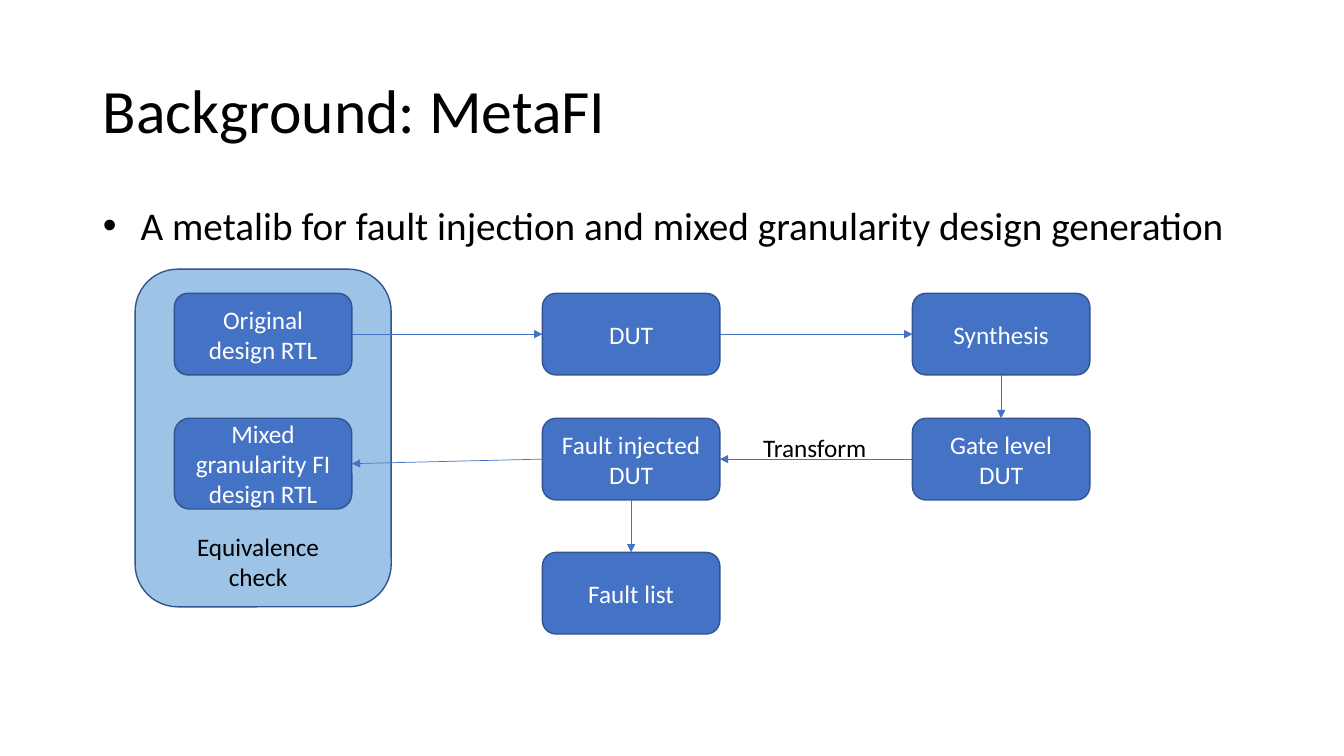
from lxml import etree
from pptx import Presentation
from pptx.dml.color import RGBColor
from pptx.enum.shapes import MSO_CONNECTOR, MSO_SHAPE
from pptx.enum.text import MSO_ANCHOR, MSO_AUTO_SIZE, PP_ALIGN
from pptx.oxml.ns import qn
from pptx.util import Inches, Pt

ROUND = MSO_SHAPE.ROUNDED_RECTANGLE
STRAIGHT = MSO_CONNECTOR.STRAIGHT
LEFT, CENTER = PP_ALIGN.LEFT, PP_ALIGN.CENTER
TOP, MIDDLE = MSO_ANCHOR.TOP, MSO_ANCHOR.MIDDLE
FIXED, GROW = MSO_AUTO_SIZE.NONE, MSO_AUTO_SIZE.SHAPE_TO_FIT_TEXT
# Connection sites of a rectangle
UP, WEST, DOWN, EAST = range(4)

COLORS = {
    "text": "000000",
    "white": "FFFFFF",
    "blue": "4472C4",
    "edge": "325491",
    "panel": "9DC3E6",
}
FONT = "Calibri"
COLS = (1.73, 5.38, 9.05)
ROWS = (2.91, 4.15, 5.48)
WIDTH, HEIGHT = 1.76, 0.81

# name: text, column, row, height
STEPS = {
    "design": ("Original design RTL", 0, 0, HEIGHT),
    "dut": ("DUT", 1, 0, HEIGHT),
    "synth": ("Synthesis", 2, 0, HEIGHT),
    "mixed": ("Mixed granularity FI design RTL", 0, 1, 0.9),
    "fault": ("Fault injected DUT", 1, 1, HEIGHT),
    "gate": ("Gate level DUT", 2, 1, HEIGHT),
    "list": ("Fault list", 1, 2, HEIGHT),
}
FLOWS = (
    ("design", EAST, "dut", WEST),
    ("dut", EAST, "synth", WEST),
    ("synth", DOWN, "gate", UP),
    ("gate", WEST, "fault", EAST),
    ("fault", WEST, "mixed", EAST),
    ("fault", DOWN, "list", UP),
)


def rgb(name):
    return RGBColor.from_string(COLORS[name])


def write(frame, text, size, color="text", align=LEFT):
    frame.text = text
    para = frame.paragraphs[0]
    para.alignment = align
    para.font.name = FONT
    para.font.size = Pt(size)
    para.font.color.rgb = rgb(color)
    return para


def fill_holder(holder, text, size, top, height, anchor):
    holder.left, holder.top = Inches(0.92), Inches(top)
    holder.width, holder.height = Inches(11.5), Inches(height)
    frame = holder.text_frame
    frame.auto_size = FIXED
    frame.vertical_anchor = anchor
    props = frame.paragraphs[0]._p.get_or_add_pPr()
    if anchor == TOP:
        props.set("marL", str(Inches(0.25)))
        props.set("indent", str(Inches(-0.25)))
        etree.SubElement(props, qn("a:buFont")).set("typeface", "Arial")
        etree.SubElement(props, qn("a:buChar")).set("char", "•")
    para = write(frame, text, size)
    para.line_spacing = 0.9
    para.space_before = Pt(0)


def add_box(slide, left, top, width, height, color):
    box = slide.shapes.add_shape(
        ROUND, Inches(left), Inches(top), Inches(width), Inches(height))
    box.shadow.inherit = False
    box.fill.solid()
    box.fill.fore_color.rgb = rgb(color)
    box.line.color.rgb = rgb("edge")
    box.line.width = Pt(1)
    return box


def add_step(slide, text, col, row, height):
    box = add_box(slide, COLS[col], ROWS[row], WIDTH, height, "blue")
    box.text_frame.word_wrap = True
    box.text_frame.vertical_anchor = MIDDLE
    write(box.text_frame, text, 18, "white", CENTER)
    return box


def add_arrow(slide, start, out, end, into):
    line = slide.shapes.add_connector(STRAIGHT, 0, 0, 0, 0)
    line.begin_connect(start, out)
    line.end_connect(end, into)
    line.line.color.rgb = rgb("blue")
    line.line.width = Pt(0.5)
    edge = line.line._get_or_add_ln()
    etree.SubElement(edge, qn("a:tailEnd")).set("type", "triangle")
    etree.SubElement(line._element.spPr, qn("a:effectLst"))


def add_label(slide, text, left, top, width, height, wrap, align):
    box = slide.shapes.add_textbox(
        Inches(left), Inches(top), Inches(width), Inches(height))
    box.text_frame.word_wrap = wrap
    box.text_frame.auto_size = GROW
    write(box.text_frame, text, 18, align=align)


def main():
    prs = Presentation()
    prs.slide_width, prs.slide_height = Inches(13.33), Inches(7.5)
    slide = prs.slides.add_slide(prs.slide_layouts[1])

    # Title and bullet
    title, body = slide.placeholders
    fill_holder(title, "Background: MetaFI", 44, 0.4, 1.45, MIDDLE)
    fill_holder(
        body,
        "A metalib for fault injection and mixed granularity design generation",
        28, 2, 4.76, TOP)

    # Panel behind everything else
    panel = add_box(slide, 1.34, 2.67, 2.54, 3.35, "panel")
    title._element.addprevious(panel._element)

    # Steps and flow
    boxes = {name: add_step(slide, *step) for name, step in STEPS.items()}
    for start, out, end, into in FLOWS:
        add_arrow(slide, boxes[start], out, boxes[end], into)

    # Labels
    add_label(slide, "Equivalence check", 1.8, 5.22, 1.52, 0.71, True, CENTER)
    add_label(slide, "Transform", 7.47, 4.24, 1.24, 0.4, False, LEFT)

    prs.save("out.pptx")


if __name__ == "__main__":
    main()
